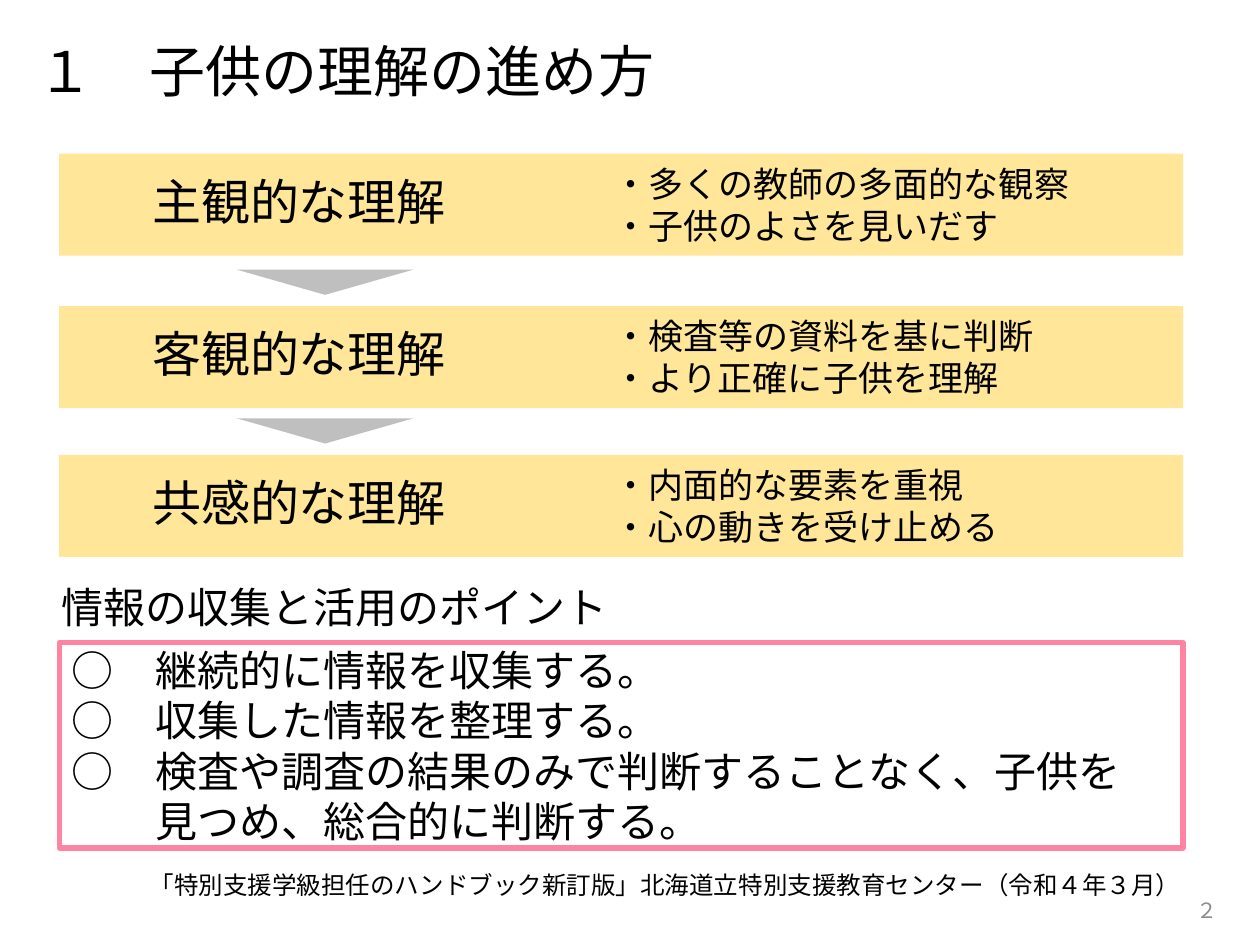
from dataclasses import dataclass

from lxml import etree
from pptx import Presentation
from pptx import util as u
from pptx.dml.color import RGBColor
from pptx.enum import lang, shapes, text
from pptx.oxml import ns


@dataclass(frozen=True)
class Theme:
    font: str = "Noto Sans CJK JP"
    ink: str = "000000"
    muted: str = "8C8C8C"
    band: str = "FFE699"
    arrow: str = "BFBFBF"
    paper: str = "FFFFFF"
    frame: str = "FF84A1"
    title: int = 32
    stage: int = 28
    body: int = 24
    detail: int = 20
    source: int = 14
    number: int = 12


THEME = Theme()
LEFT, WIDTH = 0.47, 8.92
BAND_HEIGHT = 0.81
STAGES = [
    (1.22, "主観的な理解", ["・多くの教師の多面的な観察", "・子供のよさを見いだす"]),
    (2.43, "客観的な理解", ["・検査等の資料を基に判断", "・より正確に子供を理解"]),
    (3.61, "共感的な理解", ["・内面的な要素を重視", "・心の動きを受け止める"]),
]
POINTS = [
    "○　継続的に情報を収集する。",
    "○　収集した情報を整理する。",
    "○　検査や調査の結果のみで判断することなく、子供を\v見つめ、総合的に判断する。",
]


def apply(target, values):
    for name, value in values.items():
        setattr(target, name, value)


def inches(*lengths):
    return [u.Inches(length) for length in lengths]


def write(holder, lines, size, color=THEME.ink, align=text.PP_ALIGN.LEFT,
          anchor=text.MSO_ANCHOR.MIDDLE, hanging=0):
    frame = holder.text_frame
    apply(frame, {"word_wrap": True, "auto_size": text.MSO_AUTO_SIZE.NONE,
                  "vertical_anchor": anchor})
    frame.text = "\n".join(lines)
    for paragraph in frame.paragraphs:
        paragraph.alignment = align
        if hanging:
            properties = paragraph._p.get_or_add_pPr()
            properties.set("marL", str(u.Pt(hanging)))
            properties.set("indent", str(-u.Pt(hanging)))
        for run in paragraph.runs:
            apply(run.font, {"name": THEME.font, "size": u.Pt(size),
                             "language_id": lang.MSO_LANGUAGE_ID.JAPANESE})
            run.font.color.rgb = RGBColor.from_string(color)
            latin = run.font._element.find(ns.qn("a:latin"))
            east_asian = etree.Element(ns.qn("a:ea"), typeface=THEME.font)
            latin.addnext(east_asian)


def add_label(slide, box, lines, size, **options):
    write(slide.shapes.add_textbox(*inches(*box)), lines, size, **options)


def add_block(slide, kind, box, fill, border=None):
    block = slide.shapes.add_shape(kind, *inches(*box))
    block.shadow.inherit = False
    block.fill.solid()
    block.fill.fore_color.rgb = RGBColor.from_string(fill)
    if border:
        block.line.color.rgb = RGBColor.from_string(border)
        block.line.width = u.Pt(3)
    else:
        block.line.fill.background()
    return block


def add_title(slide, heading):
    title = slide.shapes.title
    apply(title, dict(zip(("left", "top", "width", "height"),
                          inches(0.2, 0.2, 10, 0.71))))
    write(title, [heading], THEME.title)


def add_stage(slide, top, name, details):
    add_block(slide, shapes.MSO_SHAPE.RECTANGLE,
              (LEFT, top, WIDTH, BAND_HEIGHT), THEME.band)
    add_label(slide, (1.11, top + 0.09, 3.54, 0.57), [name], THEME.stage,
              anchor=text.MSO_ANCHOR.TOP)
    add_label(slide, (4.77, top + 0.02, 3.94, 0.77), details, THEME.detail,
              anchor=text.MSO_ANCHOR.TOP)


def add_step_arrow(slide, next_top):
    arrow = add_block(slide, shapes.MSO_SHAPE.ISOSCELES_TRIANGLE,
                      (1.88, next_top - 0.29, 1.4, 0.2), THEME.arrow)
    arrow.rotation = 180


def add_points(slide):
    add_label(slide, (0.39, 4.63, WIDTH, 0.37),
              ["情報の収集と活用のポイント"], THEME.body)
    points = add_block(slide, shapes.MSO_SHAPE.RECTANGLE,
                       (LEFT, 5.1, WIDTH, 1.63), THEME.paper, THEME.frame)
    write(points, POINTS, THEME.body, hanging=2 * THEME.body)


def main():
    deck = Presentation()
    apply(deck, {"slide_width": u.Inches(10), "slide_height": u.Inches(7.5)})
    slide = deck.slides.add_slide(deck.slide_layouts[5])
    add_title(slide, "１　子供の理解の進め方")
    for stage in STAGES:
        add_stage(slide, *stage)
    for next_top, *_ in STAGES[1:]:
        add_step_arrow(slide, next_top)
    add_points(slide)
    add_label(slide, (0.75, 6.84, WIDTH, 0.37),
              ["「特別支援学級担任のハンドブック新訂版」北海道立特別支援教育センター（令和４年３月）　"],
              THEME.source, align=text.PP_ALIGN.RIGHT)
    add_label(slide, (7.51, 7.02, 2.25, 0.4), ["２"], THEME.number,
              color=THEME.muted, align=text.PP_ALIGN.RIGHT)
    deck.save("out.pptx")


if __name__ == "__main__":
    main()
